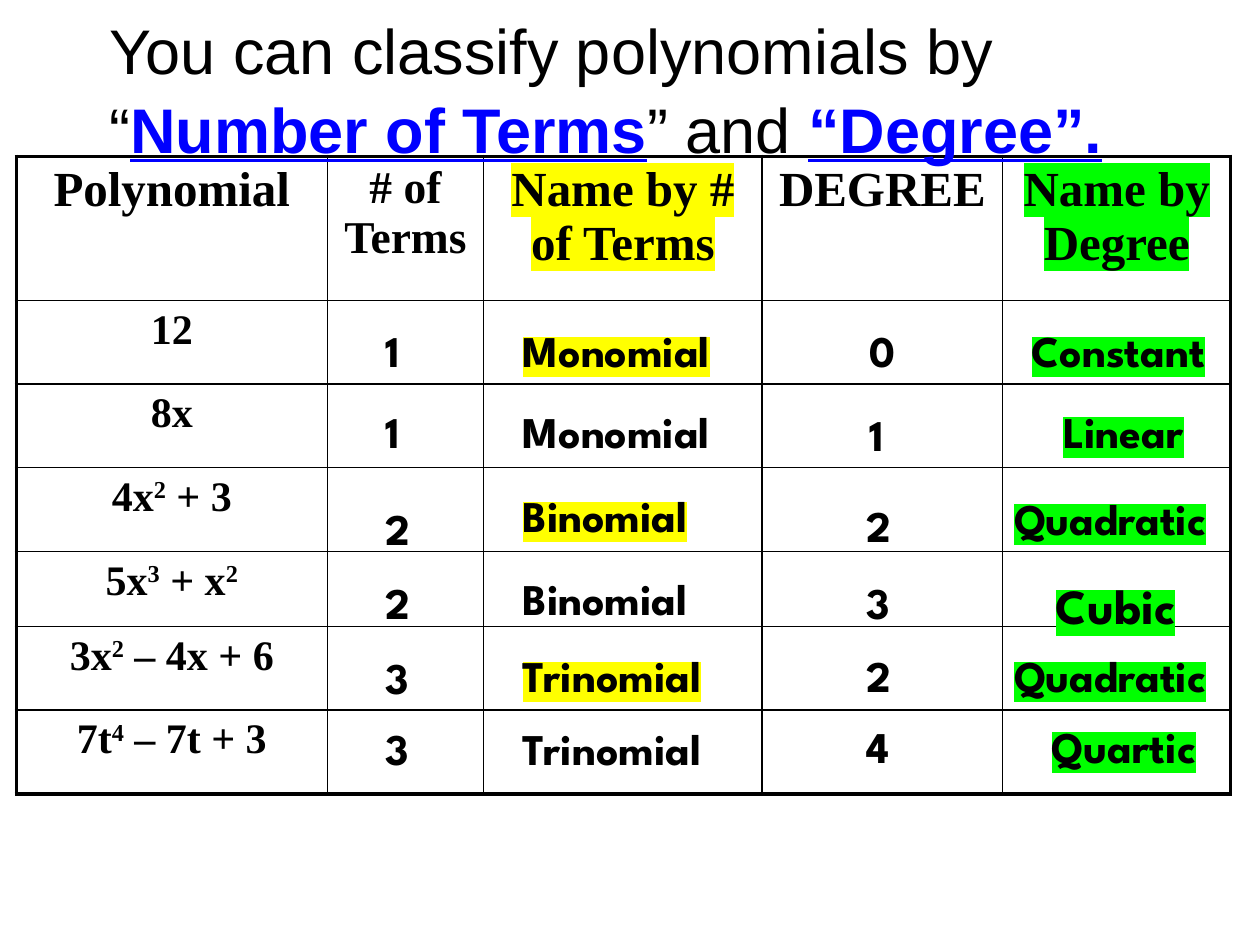
from dataclasses import dataclass
from typing import Optional

from lxml.etree import SubElement
from pptx import Presentation
from pptx.dml.color import RGBColor
from pptx.enum.text import MSO_AUTO_SIZE as AutoSize, PP_ALIGN as Align
from pptx.oxml.ns import qn
from pptx.util import Pt

COLORS = {
    "black": "000000",
    "blue": "0000FF",
    "yellow": "FFFF00",
    "green": "00FF00",
}
SERIF, SANS, ANSWER = "Times New Roman", "Arial", "League Spartan"
COL_WIDTHS = [177.8, 89.3, 159.1, 137.5, 130.3]
ROW_HEIGHTS = [82.4, 47.8, 47.8, 47.8, 43, 47.8, 47.8]
THIN, THICK = 1, 2.25


@dataclass(frozen=True)
class Run:
    text: str
    size: float
    font: str
    color: str = "black"
    bold: bool = True
    underline: bool = False
    highlight: Optional[str] = None
    superscript: bool = False


@dataclass(frozen=True)
class Answer:
    text: str
    left: float
    top: float
    width: float
    highlight: Optional[str] = None
    size: float = 25


def add_run(p, run: Run) -> None:
    r = p.add_run()
    r.text = run.text
    f = r.font
    f.size, f.bold, f.underline = Pt(run.size), run.bold, run.underline
    f.color.rgb = RGBColor.from_string(COLORS[run.color])
    rPr = f._element
    if run.highlight:
        hl = SubElement(rPr, qn("a:highlight"))
        SubElement(hl, qn("a:srgbClr"), val=COLORS[run.highlight])
    if run.superscript:
        rPr.set("baseline", "30000")
    f.name = run.font


def add_text(s, left: float, top: float, width: float, height: float,
             runs: list[Run], spacing: float = 1) -> None:
    tf = s.shapes.add_textbox(Pt(left), Pt(top), Pt(width), Pt(height)).text_frame
    tf.word_wrap = True
    tf.auto_size = AutoSize.SHAPE_TO_FIT_TEXT
    p = tf.paragraphs[0]
    p.line_spacing = spacing
    for run in runs:
        add_run(p, run)


def set_borders(cell, widths: dict[str, float]) -> None:
    tcPr = cell._tc.get_or_add_tcPr()
    for side, width in widths.items():
        ln = SubElement(tcPr, qn(f"a:ln{side}"), w=str(Pt(width)))
        fill = SubElement(ln, qn("a:solidFill"))
        SubElement(fill, qn("a:srgbClr"), val=COLORS["black"])


def add_grid(s, left: float, top: float, contents: dict[tuple[int, int], list[Run]]) -> None:
    n_rows, n_cols = len(ROW_HEIGHTS), len(COL_WIDTHS)
    table = s.shapes.add_table(n_rows, n_cols, Pt(left), Pt(top),
                               Pt(sum(COL_WIDTHS)), Pt(sum(ROW_HEIGHTS))).table
    table.first_row = table.horz_banding = False
    for col, width in zip(table.columns, COL_WIDTHS):
        col.width = Pt(width)
    for i, height in enumerate(ROW_HEIGHTS):
        table.rows[i].height = Pt(height)
        for j in range(n_cols):
            cell = table.cell(i, j)
            set_borders(cell, {
                "L": THICK if j == 0 else THIN,
                "R": THICK if j == n_cols - 1 else THIN,
                "T": THICK if i == 0 else THIN,
                "B": THICK if i == n_rows - 1 else THIN,
            })
            cell.fill.background()
            p = cell.text_frame.paragraphs[0]
            p.alignment = Align.CENTER
            for run in contents.get((i, j), []):
                add_run(p, run)


def polynomial(*parts: str) -> list[Run]:
    return [Run(t, 24, SERIF, superscript=k % 2 == 1) for k, t in enumerate(parts)]


HEADERS = [
    Run("Polynomial", 28, SERIF),
    Run("# of Terms", 26, SERIF),
    Run("Name by # of Terms", 28, SERIF, highlight="yellow"),
    Run("DEGREE", 28, SERIF),
    Run("Name by Degree", 28, SERIF, highlight="green"),
]
POLYNOMIALS = [
    polynomial("12"),
    polynomial("8x"),
    polynomial("4x", "2", " + 3"),
    polynomial("5x", "3", " + x", "2"),
    polynomial("3x", "2", " – 4x + 6"),
    polynomial("7t", "4", " – 7t + 3"),
]
TERM_COUNTS = [
    Answer(text, 213.1, top, 64.8)
    for text, top in zip("112233", [181.4, 227.5, 283, 325.4, 368.6, 409])
]
TERM_NAMES = [
    Answer(text, 291.6, top, 149.8, None if k % 2 else "yellow")
    for k, (text, top) in enumerate([
        ("Monomial", 181.4), ("Monomial", 227.5), ("Binomial", 275.8),
        ("Binomial", 323.3), ("Trinomial", 367.2), ("Trinomial", 409),
    ])
]
DEGREES = [
    Answer(text, 489.6 if k < 2 else 488.2, top, 74.9)
    for k, (text, top) in enumerate(
        zip("012324", [181.4, 229.7, 281.5, 325.4, 367.2, 407.5]))
]
DEGREE_NAMES = [
    Answer(text, left, top, 149.8, "green", size)
    for text, left, top, size in [
        ("Constant", 582.5, 181.4, 25),
        ("Linear", 600.5, 227.5, 25),
        ("Quadratic", 572.4, 277.2, 25),
        ("Cubic", 596.2, 325.4, 28),
        ("Quadratic", 572.4, 367.2, 25),
        ("Quartic", 594, 407.5, 25),
    ]
]
TITLE = [
    Run("You can classify polynomials by “", 36, SANS, bold=False),
    Run("Number of Terms", 36, SANS, "blue", underline=True),
    Run("” and ", 36, SANS, bold=False),
    Run("“Degree”.", 36, SANS, "blue", underline=True),
]


def main() -> None:
    prs = Presentation()
    prs.slide_width, prs.slide_height = Pt(720), Pt(540)
    s = prs.slides.add_slide(prs.slide_layouts[6])
    contents = {(0, j): [run] for j, run in enumerate(HEADERS)}
    contents |= {(i, 0): runs for i, runs in enumerate(POLYNOMIALS, 1)}
    add_grid(s, 9.3, 89.3, contents)
    for a in TERM_COUNTS + TERM_NAMES + DEGREES + DEGREE_NAMES:
        add_text(s, a.left, a.top, a.width, 1.5 * a.size,
                 [Run(a.text, a.size, ANSWER, highlight=a.highlight)])
    add_text(s, 55.4, 0.7, 671, 94.3, TITLE, spacing=1.05)
    prs.save("out.pptx")


if __name__ == "__main__":
    main()
